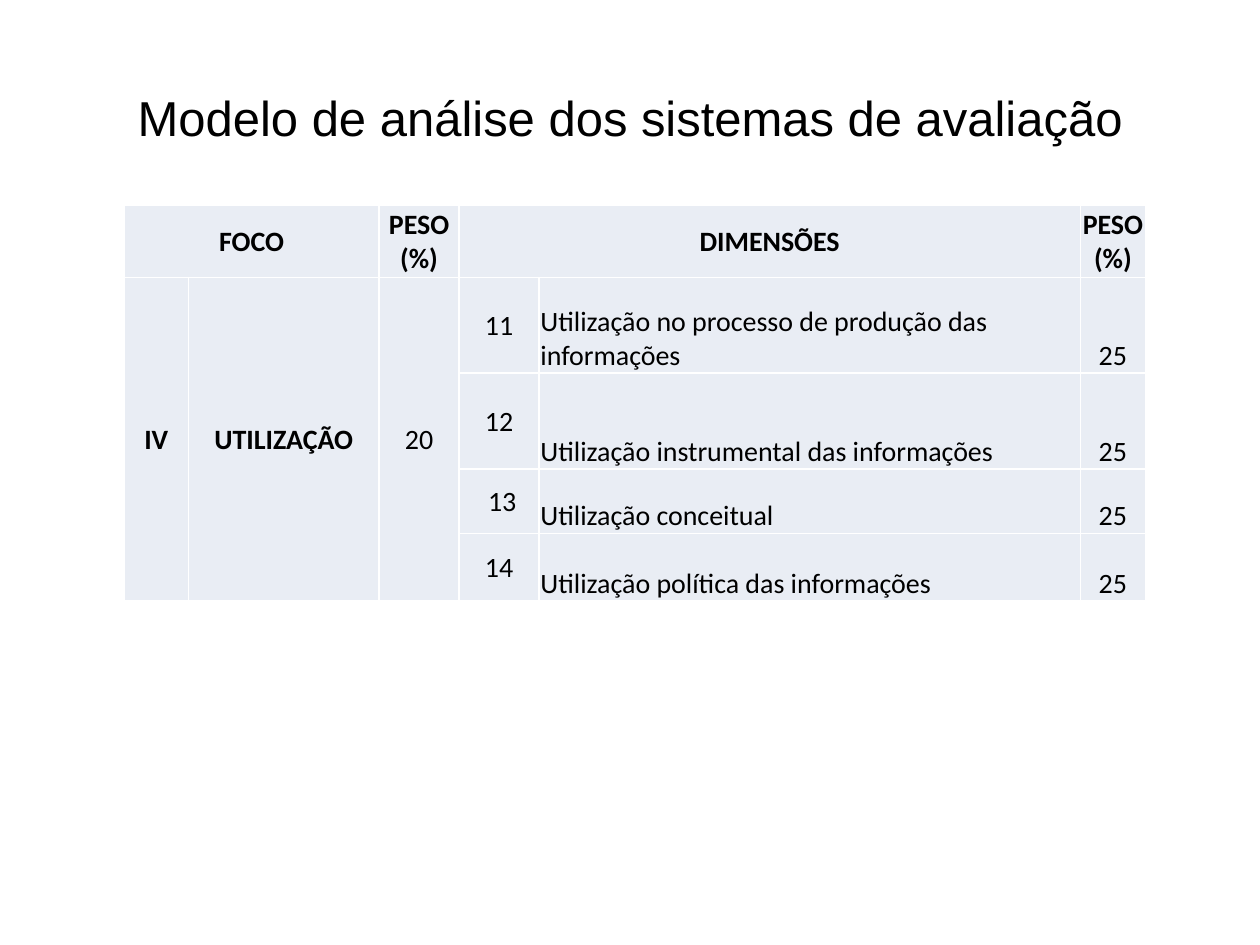
from dataclasses import dataclass
from typing import Any

from lxml import etree
from pptx import Presentation
from pptx.dml.color import RGBColor
from pptx.enum import text
from pptx.oxml import ns
from pptx.util import Pt


@dataclass(frozen=True)
class Theme:
    ink: str = "000000"
    fill: str = "E9EDF4"
    line: str = "FFFFFF"
    head: str = "Arial"
    body: str = "Calibri"
    big: int = 28
    small: int = 16
    rule: int = 1


@dataclass(frozen=True)
class Cell:
    row: int
    col: int
    words: str
    bold: bool = False
    low: bool = False
    left: bool = False
    rows: int = 1
    cols: int = 1


THEME = Theme()
WIDTHS = (36.75, 109, 45.75, 45.75, 309.25, 37.25)
HEIGHTS = (41.5, 54.75, 54.75, 36.75, 38.75)
DIMS = (
    ("11", "Utilização no processo de produção das informações"),
    ("12", "Utilização instrumental das informações"),
    (" 13", "Utilização conceitual"),
    ("14", "Utilização política das informações"),
)
CELLS = [
    Cell(0, 0, "FOCO", bold=True, cols=2),
    Cell(0, 2, "PESO (%)", bold=True),
    Cell(0, 3, "DIMENSÕES", bold=True, cols=2),
    Cell(0, 5, "PESO (%)", bold=True),
    Cell(1, 0, "IV", bold=True, rows=4),
    Cell(1, 1, "UTILIZAÇÃO", bold=True, rows=4),
    Cell(1, 2, "20", rows=4),
]
for row, (code, name) in enumerate(DIMS, 1):
    CELLS += [
        Cell(row, 3, code),
        Cell(row, 4, name, low=True, left=True),
        Cell(row, 5, "25", low=True),
    ]


def assign(item: Any, **values: Any) -> None:
    for key, value in values.items():
        setattr(item, key, value)


def style(para: Any, face: str, size: int, bold: bool, left: bool = False) -> None:
    para.alignment = text.PP_ALIGN.LEFT if left else text.PP_ALIGN.CENTER
    assign(para.font, name=face, size=Pt(size), bold=bold)
    para.font.color.rgb = RGBColor.from_string(THEME.ink)


def paint(cell: Any) -> None:
    cell.fill.solid()
    cell.fill.fore_color.rgb = RGBColor.from_string(THEME.fill)
    props = cell._tc.get_or_add_tcPr()
    for place, side in enumerate(("lnL", "lnR", "lnT", "lnB")):
        line = etree.Element(ns.qn(f"a:{side}"), w=str(Pt(THEME.rule)))
        solid = etree.SubElement(line, ns.qn("a:solidFill"))
        etree.SubElement(solid, ns.qn("a:srgbClr"), val=THEME.line)
        props.insert(place, line)


def write(table: Any, item: Cell) -> None:
    cell = table.cell(item.row, item.col)
    if item.rows > 1 or item.cols > 1:
        cell.merge(table.cell(item.row + item.rows - 1, item.col + item.cols - 1))
    anchor = text.MSO_ANCHOR.BOTTOM if item.low else text.MSO_ANCHOR.MIDDLE
    assign(cell, text=item.words, vertical_anchor=anchor)
    style(cell.text_frame.paragraphs[0], THEME.body, THEME.small, item.bold, item.left)


def draw_title(slide: Any) -> None:
    title = slide.shapes.title
    assign(title, left=Pt(36), top=Pt(21.6), width=Pt(648), height=Pt(90))
    frame = title.text_frame
    assign(frame, text="Modelo de análise dos sistemas de avaliação",
           vertical_anchor=text.MSO_ANCHOR.MIDDLE)
    style(frame.paragraphs[0], THEME.head, THEME.big, False)


def draw_table(slide: Any) -> None:
    table = slide.shapes.add_table(
        len(HEIGHTS), len(WIDTHS), Pt(70.9), Pt(117),
        Pt(sum(WIDTHS)), Pt(sum(HEIGHTS))).table
    assign(table, first_row=False, horz_banding=False)
    for col, width in zip(table.columns, WIDTHS):
        col.width = Pt(width)
    for row, height in zip(table.rows, HEIGHTS):
        row.height = Pt(height)
    for cell in table.iter_cells():
        assign(cell, margin_left=Pt(0.75), margin_right=Pt(0.75),
               margin_top=Pt(0.75), margin_bottom=Pt(0))
        paint(cell)
    for item in CELLS:
        write(table, item)


def main() -> None:
    deck = Presentation()
    assign(deck, slide_width=Pt(720), slide_height=Pt(540))
    slide = deck.slides.add_slide(deck.slide_layouts[5])
    draw_title(slide)
    draw_table(slide)
    deck.save("out.pptx")


if __name__ == "__main__":
    main()
